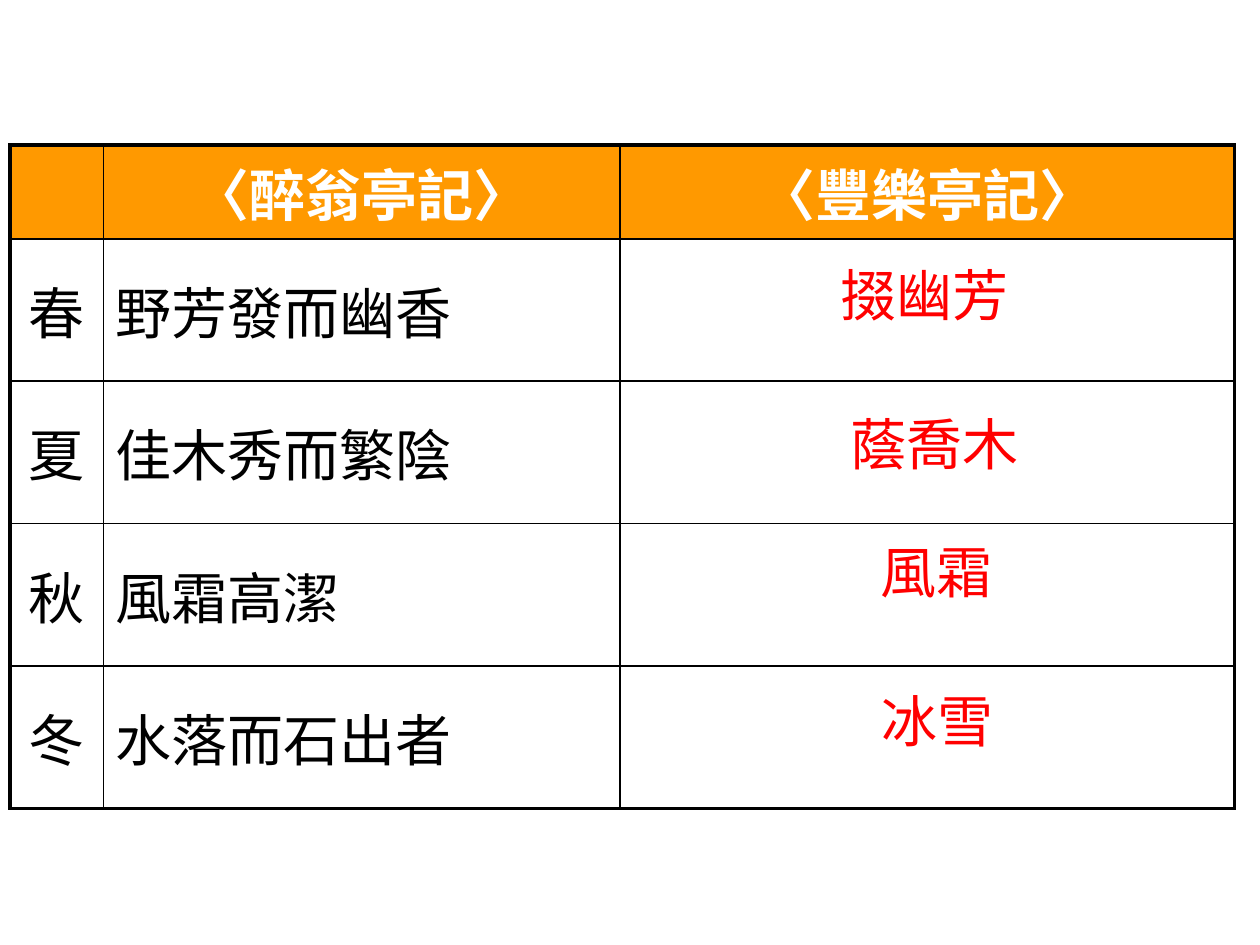
import pptx
import pptx.dml.color
import pptx.enum.text
import pptx.oxml
import pptx.oxml.ns
import pptx.util

Inches = pptx.util.Inches
Pt = pptx.util.Pt
RGB = pptx.dml.color.RGBColor.from_string

THEME = {
    "header": "FF9900", "header_text": "FFFFFF", "body": "000000",
    "answer": "FF0000", "line": "000000", "size": 32,
    "table_font": "Calibri", "answer_font": "Arial",
    "inner": 1, "outer": 2.25,
}


def style(paragraph, font, color, bold=False):
    for span in paragraph.runs:
        span.font.name = font
        span.font.size = Pt(THEME["size"])
        span.font.bold = bold
        span.font.color.rgb = RGB(THEME[color])


def set_borders(cell, widths):
    """Draw the borders from a mapping of side (L, R, T, B) to points."""
    properties = cell._tc.get_or_add_tcPr()
    for position, (side, points) in enumerate(widths.items()):
        line = pptx.oxml.parse_xml(
            f'<a:ln{side} {pptx.oxml.ns.nsdecls("a")} w="{int(Pt(points))}">'
            f'<a:solidFill><a:srgbClr val="{THEME["line"]}"/></a:solidFill>'
            f'</a:ln{side}>')
        properties.insert(position, line)


deck = pptx.Presentation()
deck.slide_width, deck.slide_height = Inches(10), Inches(7.5)
page = deck.slides.add_slide(deck.slide_layouts[6])

rows = [
    ("", "〈醉翁亭記〉", "〈豐樂亭記〉"),
    ("春", "野芳發而幽香", ""),
    ("夏", "佳木秀而繁陰", ""),
    ("秋", "風霜高潔", ""),
    ("冬", "水落而石出者", ""),
]
column_widths = (0.74, 4.1, 4.88)
row_heights = [0.63] + [1.13] * 4
last_row, last_column = len(rows) - 1, len(column_widths) - 1

table = page.shapes.add_table(
    len(rows), len(column_widths), Inches(0.08), Inches(1.15),
    Inches(sum(column_widths)), Inches(sum(row_heights))).table
for column, width in zip(table.columns, column_widths):
    column.width = Inches(width)
for row, height in zip(table.rows, row_heights):
    row.height = Inches(height)

for r, texts in enumerate(rows):
    for c, text in enumerate(texts):
        cell = table.cell(r, c)
        header = r == 0
        if header:
            cell.fill.solid()
            cell.fill.fore_color.rgb = RGB(THEME["header"])
        else:
            cell.fill.background()
        edges = {"L": c == 0, "R": c == last_column,
                 "T": r == 0, "B": r == last_row}
        set_borders(cell, {side: THEME["outer" if edge else "inner"]
                           for side, edge in edges.items()})
        if not text:
            continue
        cell.vertical_anchor = pptx.enum.text.MSO_ANCHOR.MIDDLE
        cell.text_frame.text = text
        paragraph = cell.text_frame.paragraphs[0]
        if header or c == 0:
            paragraph.alignment = pptx.enum.text.PP_ALIGN.CENTER
        style(paragraph, THEME["table_font"],
              "header_text" if header else "body", bold=header)

answers = [
    ("掇幽芳", 6.57, 2.02, 1.55),
    ("蔭喬木", 6.65, 3.2, 1.55),
    ("風霜", 6.89, 4.22, 1.1),
    ("冰雪", 6.9, 5.4, 1.1),
]
for text, left, top, width in answers:
    box = page.shapes.add_textbox(
        Inches(left), Inches(top), Inches(width), Inches(0.63))
    box.text_frame.word_wrap = False
    box.text_frame.auto_size = pptx.enum.text.MSO_AUTO_SIZE.SHAPE_TO_FIT_TEXT
    box.text_frame.text = text
    style(box.text_frame.paragraphs[0], THEME["answer_font"], "answer")

deck.save("out.pptx")
